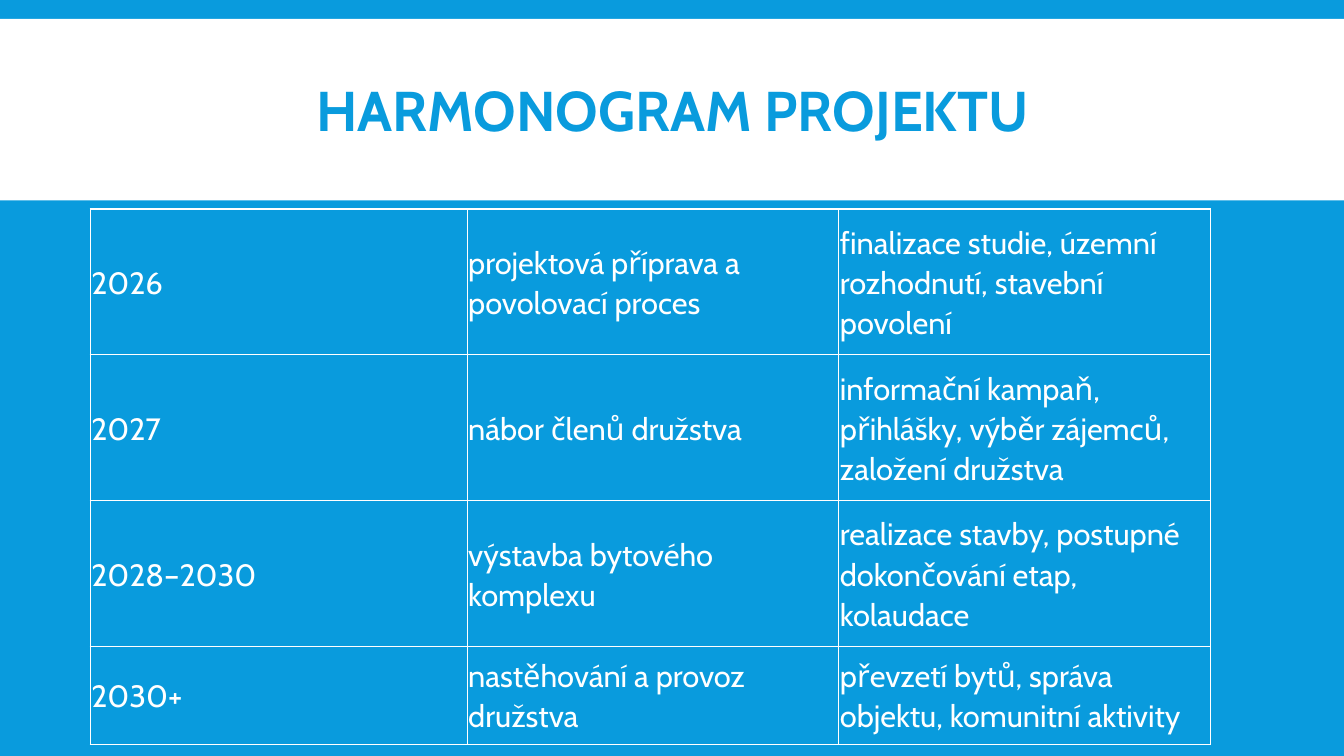
from dataclasses import dataclass

import pptx
import pptx.dml.color
import pptx.enum.shapes
import pptx.enum.text
import pptx.oxml
import pptx.oxml.ns
import pptx.util

EMU_PER_PX = 9525


@dataclass(frozen=True)
class Theme:
    blue: str = "099BDD"
    white: str = "FFFFFF"
    font: str = "Cabin"
    title_size: int = 40
    table_size: int = 22
    border_width: int = 1
    title_spacing: float = 0.85
    table_spacing: float = 1.07


@dataclass(frozen=True)
class Box:
    left: int
    top: int
    width: int
    height: int

    def emu(self) -> tuple[pptx.util.Emu, ...]:
        return tuple(px(n) for n in (self.left, self.top, self.width, self.height))


@dataclass(frozen=True)
class Phase:
    period: str
    stage: str
    steps: str
    height: int


THEME = Theme()
SLIDE = Box(0, 0, 1280, 720)
BANNER = Box(0, 18, 1280, 173)
TITLE = Box(127, 30, 1027, 158)
SCHEDULE_LEFT, SCHEDULE_TOP = 86, 199
COLUMN_WIDTHS = (359, 354, 354)
CELL_MARGIN = 1

PHASES = (
    Phase("2026", "projektová příprava a povolovací proces",
          "finalizace studie, územní rozhodnutí, stavební povolení", 139),
    Phase("2027", "nábor členů družstva",
          "informační kampaň, přihlášky, výběr zájemců, založení družstva", 139),
    Phase("2028–2030", "výstavba bytového komplexu",
          "realizace stavby, postupné dokončování etap, kolaudace", 139),
    Phase("2030+", "nastěhování a provoz družstva",
          "převzetí bytů, správa objektu, komunitní aktivity", 93),
)


def px(count: int) -> pptx.util.Emu:
    return pptx.util.Emu(count * EMU_PER_PX)


def rgb(code: str) -> pptx.dml.color.RGBColor:
    return pptx.dml.color.RGBColor.from_string(code)


def style_paragraph(paragraph, size: int, color: str, spacing: float,
                    bold: bool = False) -> None:
    paragraph.line_spacing = spacing
    paragraph.font.name = THEME.font
    paragraph.font.size = pptx.util.Pt(size)
    paragraph.font.bold = bold
    paragraph.font.color.rgb = rgb(color)


def add_banner_and_title(slide) -> None:
    """Put the white banner behind the title placeholder."""
    banner = slide.shapes.add_shape(
        pptx.enum.shapes.MSO_SHAPE.RECTANGLE, *BANNER.emu())
    banner.shadow.inherit = False
    banner.fill.solid()
    banner.fill.fore_color.rgb = rgb(THEME.white)
    banner.line.fill.background()

    title = slide.shapes.title
    title._element.addprevious(banner._element)
    title.left, title.top, title.width, title.height = TITLE.emu()
    frame = title.text_frame
    frame.text = "HARMONOGRAM PROJEKTU"
    frame.word_wrap = True
    frame.auto_size = pptx.enum.text.MSO_AUTO_SIZE.NONE
    frame.vertical_anchor = pptx.enum.text.MSO_ANCHOR.MIDDLE
    heading = frame.paragraphs[0]
    heading.alignment = pptx.enum.text.PP_ALIGN.CENTER
    style_paragraph(heading, THEME.title_size, THEME.blue,
                    THEME.title_spacing, bold=True)


def add_borders(cell) -> None:
    properties = cell._tc.get_or_add_tcPr()
    width = pptx.util.Pt(THEME.border_width)
    for side in ("lnL", "lnR", "lnT", "lnB"):
        properties.append(pptx.oxml.parse_xml(
            f'<a:{side} {pptx.oxml.ns.nsdecls("a")} w="{width}"><a:solidFill>'
            f'<a:srgbClr val="{THEME.white}"/></a:solidFill></a:{side}>'))


def fill_cell(cell, text: str) -> None:
    add_borders(cell)
    cell.fill.background()
    cell.margin_left = cell.margin_right = px(CELL_MARGIN)
    cell.margin_top = cell.margin_bottom = px(CELL_MARGIN)
    cell.vertical_anchor = pptx.enum.text.MSO_ANCHOR.MIDDLE
    cell.text = text
    style_paragraph(cell.text_frame.paragraphs[0], THEME.table_size,
                    THEME.white, THEME.table_spacing)


def add_schedule(slide) -> None:
    area = Box(SCHEDULE_LEFT, SCHEDULE_TOP, sum(COLUMN_WIDTHS),
               sum(phase.height for phase in PHASES))
    schedule = slide.shapes.add_table(
        len(PHASES), len(COLUMN_WIDTHS), *area.emu()).table
    schedule.first_row = False
    schedule.horz_banding = False
    for column, width in zip(schedule.columns, COLUMN_WIDTHS):
        column.width = px(width)
    for row, phase in zip(schedule.rows, PHASES):
        row.height = px(phase.height)
        for cell, text in zip(row.cells, (phase.period, phase.stage, phase.steps)):
            fill_cell(cell, text)


def main() -> None:
    deck = pptx.Presentation()
    deck.slide_width, deck.slide_height = px(SLIDE.width), px(SLIDE.height)
    title_only = deck.slide_layouts.get_by_name("Title Only")
    slide = deck.slides.add_slide(title_only)
    slide.background.fill.solid()
    slide.background.fill.fore_color.rgb = rgb(THEME.blue)
    add_banner_and_title(slide)
    add_schedule(slide)
    deck.save("out.pptx")


if __name__ == "__main__":
    main()
